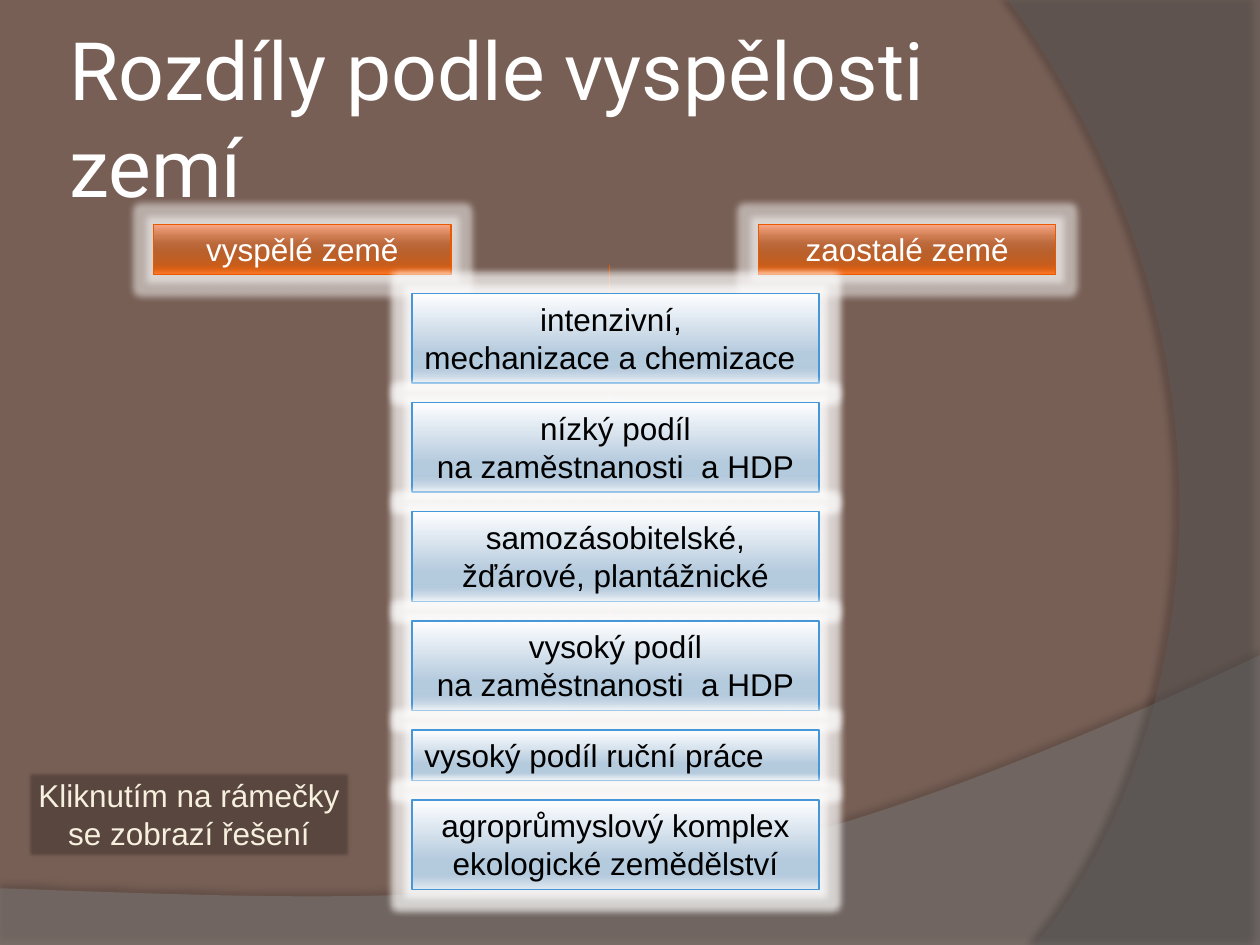
import pptx
import pptx.util
import pptx.dml.color
import pptx.enum.shapes
import pptx.enum.text
import pptx.oxml
import pptx.oxml.ns

Inches = pptx.util.Inches
CENTER = pptx.enum.text.PP_ALIGN.CENTER
LEFT = pptx.enum.text.PP_ALIGN.LEFT
RECTANGLE = pptx.enum.shapes.MSO_SHAPE.RECTANGLE

THEME = {
    "background": "775F55", "title": "FFFFFF", "title_font": "Roboto", "title_size": 46,
    "body_font": "Arial", "body_size": 18, "line": 0.75, "axis": "EA5900",
    "heading": {"text": "FFFFFF", "line": "EA5900", "glow": ("FFFFFF", 50, 8),
                "stops": [(0, "FAA685"), (25, "CD7B4F"), (38, "BB693D"), (55, "B9612C"),
                          (80, "C65D1D"), (88, "DA6015"), (100, "FF7928")]},
    "answer": {"text": "000000", "line": "4597DA", "glow": ("FFFFFF", 70, 8),
               "stops": [(0, "FEFEFF"), (68, "B4CADD"), (81, "B2C8DC"),
                         (86, "B9CDDF"), (100, "E1E9F0")]},
    "note": {"text": "F7F0DE", "fill": "594740", "soft": 2.5},
}

TITLE = "Rozdíly podle vyspělosti zemí"
HEADINGS = [("vyspělé země", 1.22), ("zaostalé země", 6.02)]
ANSWERS = [
    (0.71, [("intenzivní, ", CENTER), ("mechanizace a chemizace", LEFT)]),
    (0.71, [("nízký podíl", CENTER), ("na zaměstnanosti  a HDP", CENTER)]),
    (0.71, [("samozásobitelské, žďárové, plantážnické", CENTER)]),
    (0.71, [("vysoký podíl", CENTER), ("na zaměstnanosti  a HDP", CENTER)]),
    (0.4, [("vysoký podíl ruční práce", LEFT)]),
    (0.71, [("agroprůmyslový komplex", CENTER), ("ekologické zemědělství", CENTER)]),
]
NOTE = "Kliknutím na rámečky se zobrazí řešení"
ANSWERS_TOP, ANSWERS_BOTTOM = 2.33, 7.06

WAVES = [
    {"curve": [(10, 5.2), (5.59, 7.29), (3.91, 7.19), (0, 7.05)], "corners": [(0, 7.5), (10, 7.5)],
     "fill": ("7F7F7F", 45), "shadow": (35, 4, 3.5, 270)},
    {"curve": [(8.21, 7.5), (9.35, 6.19), (10.18, 3), (8, 0)], "corners": [(10, 0), (10, 7.5)],
     "fill": ("5E5E5E", 40), "shadow": (45, 4, 4, 180)},
]


def rgb(value):
    return pptx.dml.color.RGBColor.from_string(value)


def element(markup):
    head, tail = markup.split(" ", 1)
    return pptx.oxml.parse_xml(f"{head} {pptx.oxml.ns.nsdecls('a')} {tail}")


def add_effect(shape, markup):
    shape.shadow.inherit = False
    shape._element.spPr.find(pptx.oxml.ns.qn("a:effectLst")).append(element(markup))


def bezier(points, steps=60):
    for step in range(steps + 1):
        t = step / steps
        weights = ((1 - t) ** 3, 3 * t * (1 - t) ** 2, 3 * t * t * (1 - t), t ** 3)
        yield tuple(sum(w * p[axis] for w, p in zip(weights, points)) for axis in (0, 1))


def add_wave(slide, wave):
    outline = [(Inches(x), Inches(y)) for x, y in [*bezier(wave["curve"]), *wave["corners"]]]
    builder = slide.shapes.build_freeform(*outline[0])
    builder.add_line_segments(outline[1:], close=True)
    shape = builder.convert_to_shape()
    color, opacity = wave["fill"]
    shape.fill.solid()
    shape.fill.fore_color.rgb = rgb(color)
    shape.fill._xPr.solidFill[0].append(element(f'<a:alpha val="{opacity * 1000}"/>'))
    shape.line.fill.background()
    alpha, blur, distance, angle = wave["shadow"]
    add_effect(shape, f'<a:outerShdw blurRad="{pptx.util.Pt(blur)}" dist="{pptx.util.Pt(distance)}" '
                      f'dir="{angle * 60000}" rotWithShape="0"><a:srgbClr val="000000">'
                      f'<a:alpha val="{alpha * 1000}"/></a:srgbClr></a:outerShdw>')


def add_box(slide, place, paragraphs, style):
    shape = slide.shapes.add_shape(RECTANGLE, *map(Inches, place))
    if "stops" in style:
        shape.fill.gradient()
        gradient = shape._element.spPr.find(pptx.oxml.ns.qn("a:gradFill"))
        stops = "".join(f'<a:gs pos="{pos * 1000}"><a:srgbClr val="{color}"/></a:gs>'
                        for pos, color in style["stops"])
        gradient.getparent().replace(gradient, element(
            f'<a:gradFill rotWithShape="1"><a:gsLst>{stops}</a:gsLst>'
            '<a:lin ang="5400000" scaled="0"/></a:gradFill>'))
        shape.line.color.rgb = rgb(style["line"])
        shape.line.width = pptx.util.Pt(THEME["line"])
        color, alpha, radius = style["glow"]
        add_effect(shape, f'<a:glow rad="{pptx.util.Pt(radius)}"><a:srgbClr val="{color}">'
                          f'<a:alpha val="{alpha * 1000}"/></a:srgbClr></a:glow>')
    else:
        shape.fill.solid()
        shape.fill.fore_color.rgb = rgb(style["fill"])
        shape.line.fill.background()
        add_effect(shape, f'<a:softEdge rad="{pptx.util.Pt(style["soft"])}"/>')
    frame = shape.text_frame
    frame.word_wrap = True
    frame.vertical_anchor = pptx.enum.text.MSO_ANCHOR.TOP
    frame.auto_size = pptx.enum.text.MSO_AUTO_SIZE.SHAPE_TO_FIT_TEXT
    for index, (text, alignment) in enumerate(paragraphs):
        paragraph = frame.add_paragraph() if index else frame.paragraphs[0]
        paragraph.alignment = alignment
        add_run(paragraph, text, THEME["body_font"], THEME["body_size"], style["text"])


def add_run(paragraph, text, font, size, color):
    run = paragraph.add_run()
    run.text = text
    run.font.name = font
    run.font.size = pptx.util.Pt(size)
    run.font.color.rgb = rgb(color)


def add_title(slide):
    title = slide.shapes.title
    title.left, title.top, title.width, title.height = map(Inches, (0.5, 0.3, 8.17, 1.25))
    frame = title.text_frame
    frame.word_wrap = True
    frame.auto_size = pptx.enum.text.MSO_AUTO_SIZE.NONE
    frame.vertical_anchor = pptx.enum.text.MSO_ANCHOR.MIDDLE
    frame.margin_left = frame.margin_right = frame.margin_top = frame.margin_bottom = Inches(0.05)
    frame.paragraphs[0].alignment = LEFT
    add_run(frame.paragraphs[0], TITLE, THEME["title_font"], THEME["title_size"], THEME["title"])


def add_axis(slide):
    axis = slide.shapes.add_connector(pptx.enum.shapes.MSO_CONNECTOR.STRAIGHT,
                                      *map(Inches, (4.84, 2.1, 4.84, 4.93)))
    axis.line.color.rgb = rgb(THEME["axis"])
    axis.line.width = pptx.util.Pt(THEME["line"])
    axis._element.spPr.append(pptx.oxml.parse_xml(f"<a:effectLst {pptx.oxml.ns.nsdecls('a')}/>"))


def main():
    deck = pptx.Presentation()
    deck.slide_width, deck.slide_height = Inches(10), Inches(7.5)
    slide = deck.slides.add_slide(deck.slide_layouts[5])
    slide.background.fill.solid()
    slide.background.fill.fore_color.rgb = rgb(THEME["background"])
    for wave in WAVES:
        add_wave(slide, wave)
    add_axis(slide)
    add_title(slide)
    for text, left in HEADINGS:
        add_box(slide, (left, 1.78, 2.36, 0.4), [(text, CENTER)], THEME["heading"])
    heights = sum(height for height, _ in ANSWERS)
    gap = (ANSWERS_BOTTOM - ANSWERS_TOP - heights) / (len(ANSWERS) - 1)
    top = ANSWERS_TOP
    for height, paragraphs in ANSWERS:
        add_box(slide, (3.27, top, 3.23, height), paragraphs, THEME["answer"])
        top += height + gap
    add_box(slide, (0.2, 6.11, 2.6, 0.71), [(NOTE, CENTER)], THEME["note"])
    deck.save("out.pptx")


if __name__ == "__main__":
    main()
